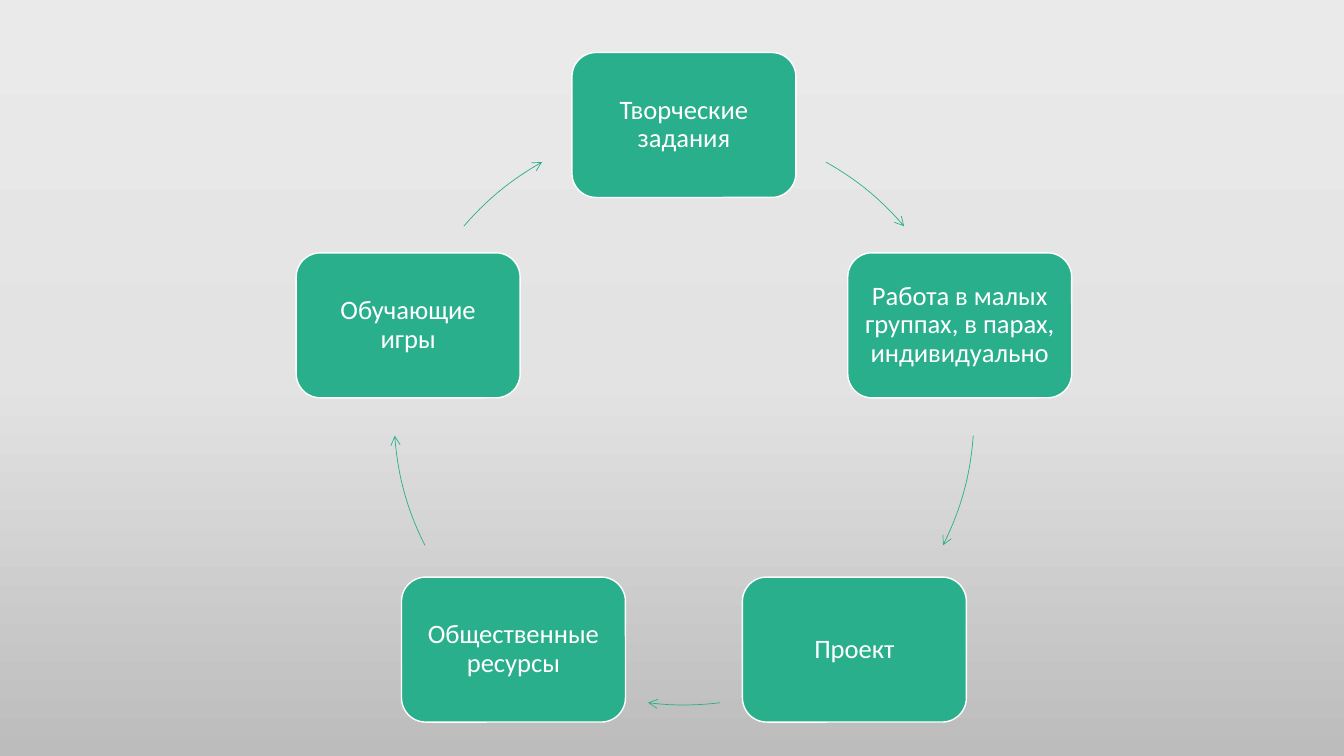
from copy import deepcopy
from math import cos, radians, sin

from lxml.etree import SubElement
from pptx import Presentation
from pptx.dml.color import RGBColor
from pptx.enum.shapes import MSO_SHAPE as Shape
from pptx.enum.text import MSO_ANCHOR as Anchor, PP_ALIGN as Align
from pptx.oxml.ns import qn
from pptx.util import Pt

# Each step: label, then start and end angle of the arrow that follows it
STEPS = [
    ("Творческие задания", 299.3, 319.4),
    ("Работа в малых группах, в парах, индивидуально", 4.1, 26.7),
    ("Проект", 82.9, 97.1),
    ("Общественные ресурсы", 153.3, 175.9),
    ("Обучающие игры", 220.6, 240.7),
]
STOPS = [(0, "EBEAEA"), (0.5, "E4E3E3"), (1, "BDBCBC")]
GREEN, WHITE = "29AF8C", "FFFFFF"
WIDE, HIGH = 1344, 756
MID_X, MID_Y, RADIUS = 684, 415, 290
BOX_W, BOX_H, INSET = 224, 145, 8
FONT = {"name": "Calibri", "size": Pt(19)}
PARA = {"alignment": Align.CENTER, "line_spacing": 0.9}
FRAME = {"word_wrap": True, "vertical_anchor": Anchor.MIDDLE}
SIDES = ("left", "top", "right", "bottom")


def px(n):
    return round(n * 914400 / 100.8)


def color(text):
    return RGBColor.from_string(text)


def style(item, values):
    for name, value in values.items():
        setattr(item, name, value)


def paint(slide):
    """Fill the background with the vertical gradient."""
    fill = slide.background.fill
    fill.gradient()
    fill.gradient_angle = 270
    first = next(slide.element.iter(qn("a:gs")))
    first.addnext(deepcopy(first))
    for stop, (place, shade) in zip(fill.gradient_stops, STOPS):
        stop.position = place
        stop.color.rgb = color(shade)


def add(slide, kind, x, y, w, h, line, width):
    """Add a shape centred on x, y."""
    shape = slide.shapes.add_shape(
        kind, px(x - w / 2), px(y - h / 2), px(w), px(h))
    shape.shadow.inherit = False
    shape.line.color.rgb = color(line)
    shape.line.width = Pt(width)
    return shape


def add_box(slide, label, angle):
    x = MID_X + RADIUS * cos(radians(angle))
    y = MID_Y + RADIUS * sin(radians(angle))
    box = add(slide, Shape.ROUNDED_RECTANGLE, x, y, BOX_W, BOX_H, WHITE, 1)
    box.fill.solid()
    box.fill.fore_color.rgb = color(GREEN)
    frame = box.text_frame
    style(frame, FRAME | {f"margin_{side}": px(INSET) for side in SIDES})
    para = frame.paragraphs[0]
    style(para, PARA)
    run = para.add_run()
    run.text = label
    style(run.font, FONT)
    run.font.color.rgb = color(WHITE)


def add_arc(slide, start, end):
    size = 2 * RADIUS
    arc = add(slide, Shape.ARC, MID_X, MID_Y, size, size, GREEN, 0.5)
    arc.fill.background()
    # Arc angles are stored in 1/60000 degree; adjustments count in 100000s
    for i, angle in enumerate((start, end)):
        arc.adjustments[i] = angle * 0.6
    line = arc.element.spPr.find(qn("a:ln"))
    SubElement(line, qn("a:tailEnd"), type="arrow")


def main():
    deck = Presentation()
    style(deck, {"slide_width": px(WIDE), "slide_height": px(HIGH)})
    slide = deck.slides.add_slide(deck.slide_layouts[6])
    paint(slide)
    for i, (label, start, end) in enumerate(STEPS):
        add_box(slide, label, -90 + i * 360 / len(STEPS))
        add_arc(slide, start, end)
    deck.save("out.pptx")


if __name__ == "__main__":
    main()
